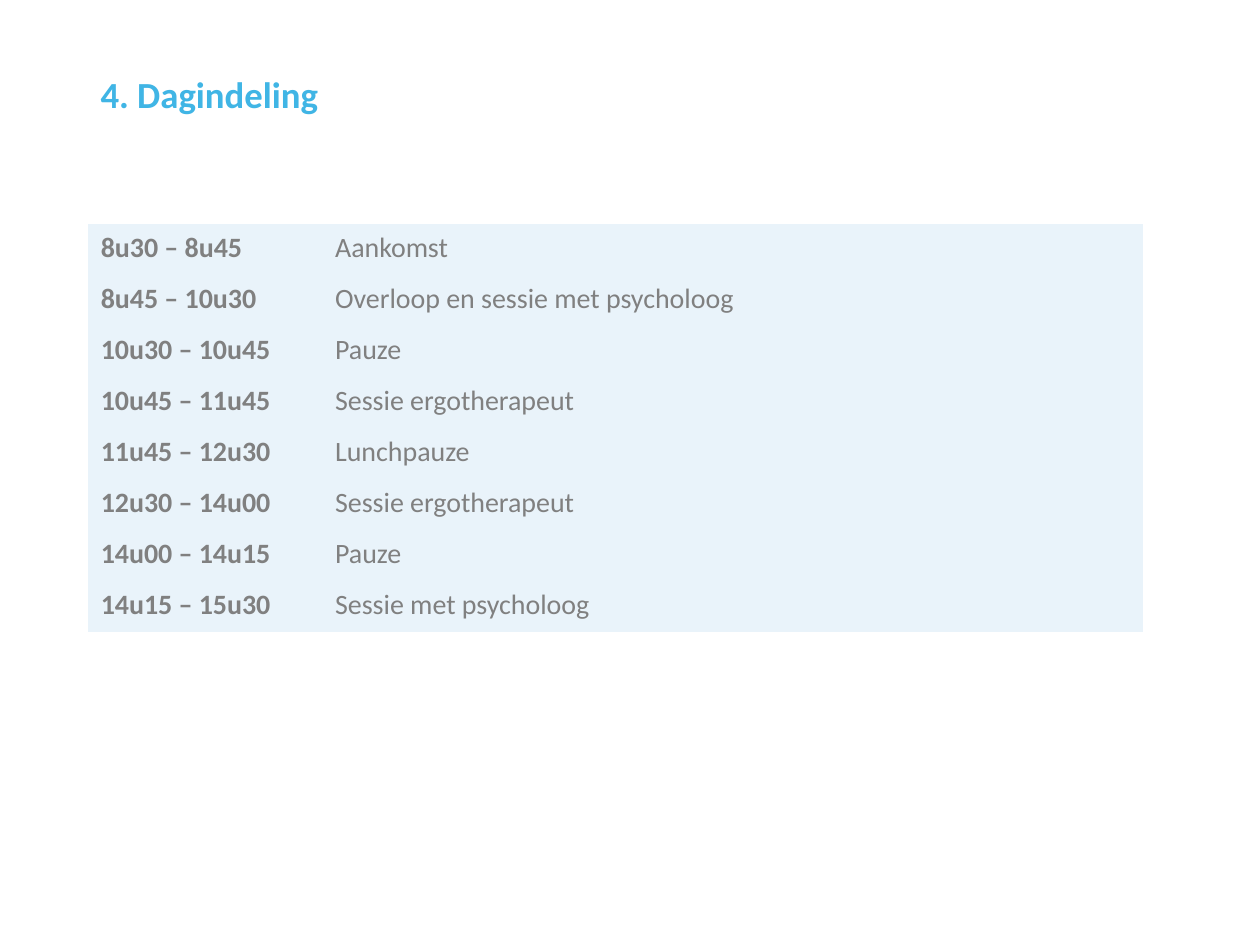
from dataclasses import dataclass

from pptx import Presentation
from pptx.dml.color import RGBColor as Color
from pptx.enum.text import MSO_ANCHOR as Anchor
from pptx.oxml.ns import qn
from pptx.util import Inches, Pt


@dataclass(frozen=True)
class Theme:
    font: str = "Calibri"
    title_color: Color = Color(0x40, 0xB5, 0xE5)
    text_color: Color = Color(0x80, 0x80, 0x80)
    cell_fill: Color = Color(0xE9, 0xF3, 0xFA)
    title_size: Pt = Pt(21)
    text_size: Pt = Pt(16)


theme = Theme()
NO_GRID_STYLE = "{2D5ABB26-0587-4C30-8999-92F81FD0307C}"


def add_span(para, text, size, color, bold):
    span = para.add_run()
    span.text = text
    span.font.name = theme.font
    span.font.size = size
    span.font.bold = bold
    span.font.color.rgb = color


deck = Presentation()
deck.slide_width, deck.slide_height = Inches(10), Inches(7.5)
page = deck.slides.add_slide(deck.slide_layouts[6])
left, width = Inches(0.7), Inches(8.37)

# Title
box = page.shapes.add_textbox(left, Inches(0.56), width, Inches(0.91))
box.text_frame.word_wrap = True
box.text_frame.vertical_anchor = Anchor.TOP
para = box.text_frame.paragraphs[0]
para.line_spacing = 0.9
add_span(para, "4. Dagindeling", theme.title_size, theme.title_color, True)

# Day schedule
schedule = [
    ("8u30 – 8u45", "Aankomst"),
    ("8u45 – 10u30", "Overloop en sessie met psycholoog"),
    ("10u30 – 10u45", "Pauze"),
    ("10u45 – 11u45", "Sessie ergotherapeut"),
    ("11u45 – 12u30", "Lunchpauze"),
    ("12u30 – 14u00", "Sessie ergotherapeut"),
    ("14u00 – 14u15", "Pauze"),
    ("14u15 – 15u30", "Sessie met psycholoog"),
]
table = page.shapes.add_table(
    len(schedule), 2, left, Inches(1.78), width, Inches(3.24)
).table
table.first_row = False
table.horz_banding = False
table._tbl.tblPr.find(qn("a:tableStyleId")).text = NO_GRID_STYLE
table.columns[0].width = Inches(1.86)
table.columns[1].width = width - Inches(1.86)

for row, entry in enumerate(schedule):
    for column, text in enumerate(entry):
        cell = table.cell(row, column)
        cell.fill.solid()
        cell.fill.fore_color.rgb = theme.cell_fill
        para = cell.text_frame.paragraphs[0]
        add_span(para, text, theme.text_size, theme.text_color, column == 0)

deck.save("out.pptx")
